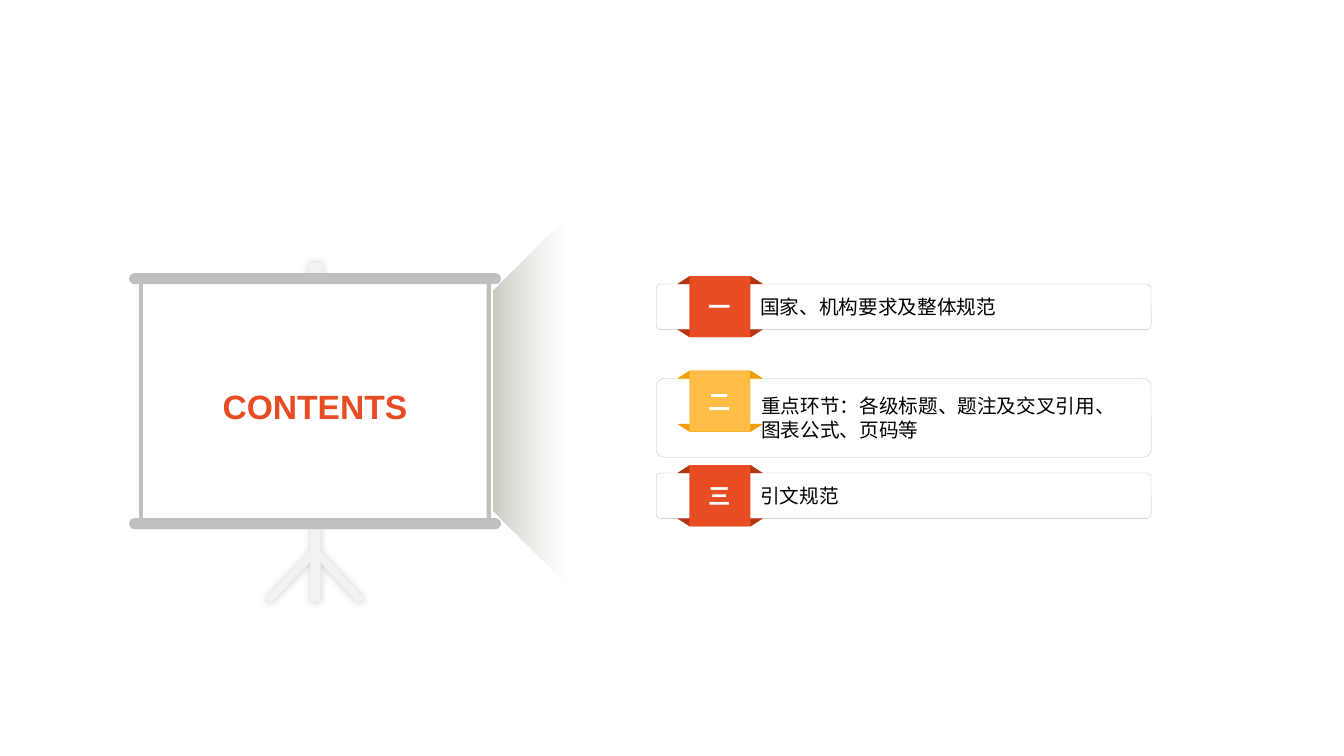
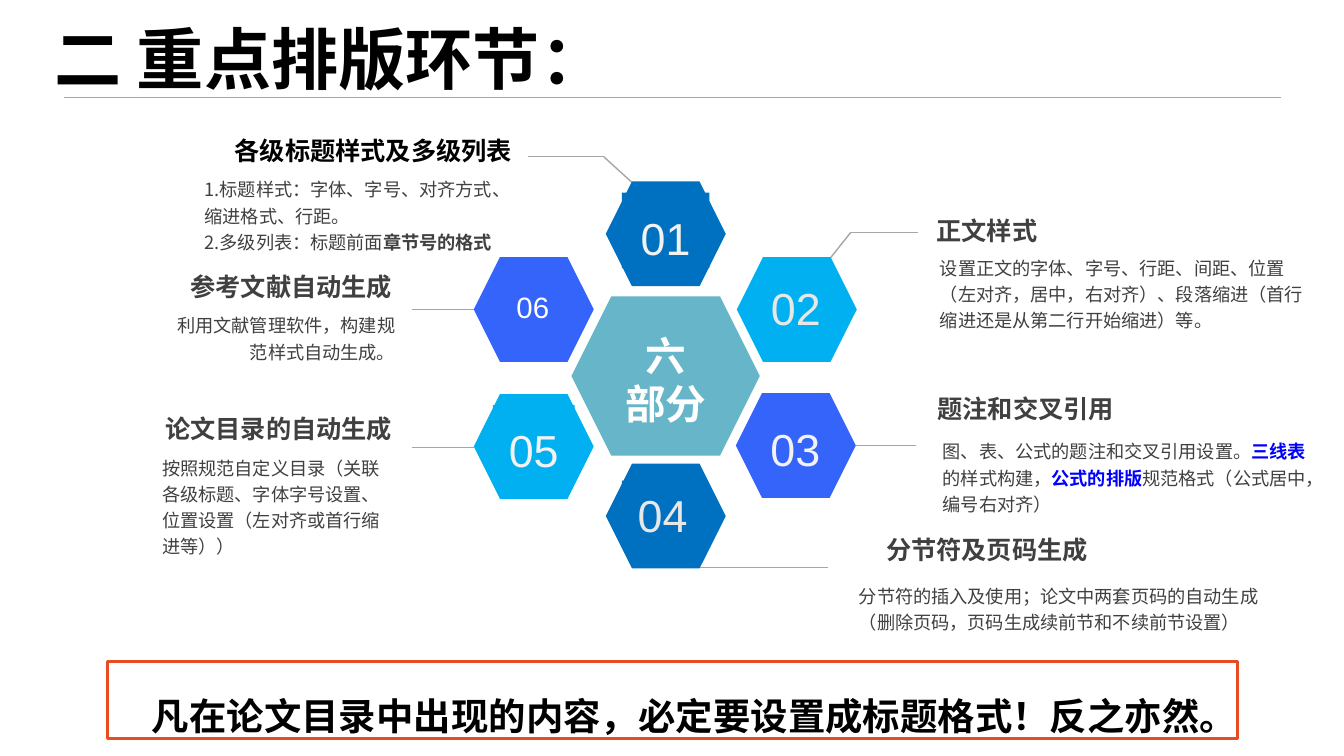
import lxml.etree
import pptx
import pptx.dml.color
import pptx.enum.shapes
import pptx.enum.text
import pptx.oxml.ns
import pptx.util

Pt = pptx.util.Pt
qn = pptx.oxml.ns.qn
rgb = pptx.dml.color.RGBColor.from_string
MSO = pptx.enum.shapes.MSO_SHAPE
ALIGN = pptx.enum.text.PP_ALIGN
ANCHOR = pptx.enum.text.MSO_ANCHOR

LATIN, CJK = "Arial", "Noto Sans CJK SC"
ORANGE, RUST, AMBER, DARK_AMBER = "E84C22", "B53513", "FFBD47", "F49D00"
NAVY, SKY, INDIGO, TEAL = "0070C0", "00B0F0", "3564FB", "66B5C9"
BLACK, WHITE, TEXT, GREY, RULE, LINK = "000000", "FFFFFF", "404040", "BFBFBF", "A6A6A6", "0000FF"


def add(s, kind, box, fill=None, line=None, width=1):
    """Add a preset shape, or a text box when kind is None; box is in points."""
    box = [Pt(v) for v in box]
    if kind is None:
        return s.shapes.add_textbox(*box)
    sp = s.shapes.add_shape(kind, *box)
    sp.shadow.inherit = False
    if fill:
        sp.fill.solid()
        sp.fill.fore_color.rgb = rgb(fill)
    else:
        sp.fill.background()
    if line:
        sp.line.color.rgb = rgb(line)
        sp.line.width = Pt(width)
    else:
        sp.line.fill.background()
    return sp


def write(sp, paragraphs, size, color=BLACK, bold=False, font=CJK, align=ALIGN.LEFT,
          anchor=ANCHOR.TOP, spacing=None, margins=(6.5, 3.6, 6.5, 3.6), wrap=True):
    """Fill a shape; each paragraph is a list of runs: a string or (text, color, bold)."""
    tf = sp.text_frame
    tf.auto_size = pptx.enum.text.MSO_AUTO_SIZE.NONE
    tf.word_wrap = wrap
    tf.vertical_anchor = anchor
    tf.margin_left, tf.margin_top, tf.margin_right, tf.margin_bottom = [Pt(m) for m in margins]
    for i, runs in enumerate(paragraphs):
        p = tf.paragraphs[0] if i == 0 else tf.add_paragraph()
        p.alignment = align
        p.line_spacing = spacing
        for run in runs:
            text, run_color, run_bold = (run, color, bold) if isinstance(run, str) else run
            r = p.add_run()
            r.text = text
            r.font.size = Pt(size)
            r.font.bold = run_bold
            r.font.name = font
            r.font.color.rgb = rgb(run_color)
            lxml.etree.SubElement(r.font._element, qn("a:ea"), typeface=CJK)


prs = pptx.Presentation()
prs.slide_width, prs.slide_height = Pt(960), Pt(540)
title_only = prs.slide_layouts[5]

# Slide 1: contents on a projection screen
s = prs.slides.add_slide(title_only)

beam = add(s, MSO.TRAPEZOID, (247.7, 260.6, 261.4, 51.1))
beam.rotation = 270
beam.adjustments[0] = 1.013
beam.fill.gradient()
beam.fill.gradient_angle = 270
for stop, color, position in zip(beam.fill.gradient_stops, ("CBCBC3", "DFDFDB"), (0, 1)):
    stop.color.rgb = rgb(color)
    stop.position = position
clear = beam._element.spPr.findall(".//" + qn("a:srgbClr"))[-1]
lxml.etree.SubElement(clear, qn("a:alpha"), val="0")

pole_top = [(220.3, 187.9), (230.4, 187.9), (230.4, 201.6), (220.3, 201.6)]
tripod = [(221.8, 357.8), (229, 357.8), (229, 393.8), (260.6, 427.7), (255.6, 430.6),
          (229, 401.8), (229, 429.8), (221.8, 429.8), (221.8, 401), (193.7, 430.6),
          (189.4, 427.7), (221.8, 393.1)]
outlines = [[(Pt(x), Pt(y)) for x, y in outline] for outline in (pole_top, tripod)]
builder = s.shapes.build_freeform(*outlines[0][0], scale=1.0)
builder.add_line_segments(outlines[0][1:], close=True)
builder.move_to(*outlines[1][0])
builder.add_line_segments(outlines[1][1:], close=True)
stand = builder.convert_to_shape()
stand.fill.solid()
stand.fill.fore_color.rgb = rgb("F2F2F2")
stand.line.fill.background()
stand.shadow.inherit = False
shadow = lxml.etree.SubElement(stand._element.spPr.find(qn("a:effectLst")), qn("a:outerShdw"),
                               blurRad=str(Pt(6)), dist="0", dir="13500000", rotWithShape="0")
shade = lxml.etree.SubElement(shadow, qn("a:srgbClr"), val=BLACK)
lxml.etree.SubElement(shade, qn("a:alpha"), val="20000")

add(s, MSO.RECTANGLE, (99.4, 199, 251.2, 175), GREY)
add(s, MSO.RECTANGLE, (102.2, 203, 245.5, 167), WHITE)
for y in (195.1, 370.1):
    rail = add(s, MSO.ROUNDED_RECTANGLE, (92.2, y, 265.7, 7.9), GREY)
    rail.adjustments[0] = 0.5

title = s.shapes.title
title.left, title.top, title.width, title.height = Pt(130.3), Pt(266.5), Pt(189.4), Pt(46.8)
write(title, [["CONTENTS"]], 24, ORANGE, True, LATIN, ALIGN.CENTER, ANCHOR.MIDDLE)
s.shapes._spTree.append(title._element)

chapters = [
    ("一", [["国家、机构要求及整体规范"]], 32.4, ORANGE, RUST),
    ("二", [["重点环节：各级标题、题注及交叉引用、"], ["图表公式、页码等"]], 56.2, AMBER, DARK_AMBER),
    ("三", [["引文规范"]], 32.4, ORANGE, RUST),
]
for i, (number, lines, height, color, fold_color) in enumerate(chapters):
    y = 197.3 + 67.5 * i
    bar = add(s, MSO.ROUNDED_RECTANGLE, (468.7, y + 5.6, 353.5, height), None, GREY, 0.25)
    bar.adjustments[0] = 0.098
    write(bar, lines, 14, font=LATIN, anchor=ANCHOR.MIDDLE, spacing=Pt(17),
          margins=(73.5, 3.6, 7.2, 3.6))
    for fold_y, turn in ((y + 38, 180), (y, 0)):
        fold = add(s, MSO.TRAPEZOID, (483.8, fold_y, 61.2, 5.6), fold_color)
        fold.adjustments[0] = 1.546
        fold.rotation = turn
    badge = add(s, MSO.RECTANGLE, (492.5, y, 43.6, 43.6), color)
    write(badge, [[number]], 16, WHITE, True, LATIN, ALIGN.CENTER, ANCHOR.MIDDLE)

# Slide 2: six parts around a hexagon
s = prs.slides.add_slide(title_only)
title = s.shapes.title
title.left, title.top, title.width, title.height = Pt(29.5), Pt(2.9), Pt(421.2), Pt(67.7)
write(title, [["二 重点排版环节："]], 48, bold=True, spacing=Pt(62),
      margins=(9.4, 5, 9.4, 0), wrap=False)

leader_lines = [
    (45.4, 69.8, 915.1, 69.8),
    (654.5, 318.2, 611.3, 318.2),
    (499.7, 405.4, 591.8, 405.4),
    (338.4, 319.7, 294.5, 319.7),
    (338.4, 221, 294.5, 221),
    (451.4, 130.3, 431.3, 112),
    (431.3, 112, 377.3, 112),
    (592.6, 185, 607.7, 166),
    (607.7, 166, 655.9, 166),
]
for ends in leader_lines:
    line = s.shapes.add_connector(pptx.enum.shapes.MSO_CONNECTOR.STRAIGHT, *[Pt(v) for v in ends])
    line.line.color.rgb = rgb(RULE)
    line.line.width = Pt(1)
    lxml.etree.SubElement(line._element.spPr, qn("a:effectLst"))

# number, hexagon corner, label box, fill, text colour, size, line spacing
parts = [
    ("02", 526.3, 183.6, (539.3, 195.8, 58.3, 46.1), SKY, "E7E7E7", 32, 1.0),
    ("01", 432.7, 129.6, (444.2, 137.5, 62.6, 54), NAVY, "F2F2F2", 32, 1.2),
    ("03", 525.6, 280.8, (535, 288.7, 66.2, 54), INDIGO, "F2F2F2", 32, 1.2),
    ("05", 338.4, 281.5, (352.1, 289.4, 58.3, 54), SKY, "F2F2F2", 32, 1.2),
    ("06", 338.4, 183.6, (351.4, 195.8, 58.3, 46.1), INDIGO, WHITE, 21, 1.0),
    ("04", 432.7, 331.2, (444.2, 343.4, 58.3, 46.1), NAVY, "E7E7E7", 32, 1.0),
]
for number, x, y, label_box, fill, color, size, spacing in parts:
    add(s, MSO.HEXAGON, (x, y, 85.7, 74.9), fill)
    label = add(s, None if number == "03" else MSO.RECTANGLE, label_box, fill)
    write(label, [[number]], size, color, font=LATIN, align=ALIGN.CENTER, spacing=spacing,
          anchor=ANCHOR.MIDDLE if size == 21 else ANCHOR.TOP, margins=(9.4, 5, 9.4, 5))

add(s, MSO.HEXAGON, (408.2, 211.7, 134.6, 113.8), TEAL)
center = add(s, MSO.RECTANGLE, (434.2, 229, 82.8, 77.8), TEAL)
write(center, [["六"], ["部分"]], 29, WHITE, True, align=ALIGN.CENTER, spacing=Pt(34.3),
      margins=(9.4, 7.5, 9.4, 0))

# heading, its box and colour, body paragraphs, their box and alignment
callouts = [
    ("各级标题样式及多级列表", (159.1, 92.2, 213.1, 28.1), BLACK,
     [["1.标题样式：字体、字号、对齐方式、缩进格式、行距。"],
      ["2.多级列表：标题前面", ("章节号的格式", TEXT, True)]],
     (139.7, 121, 234.7, 61.9), ALIGN.LEFT),
    ("参考文献自动生成", (128.2, 189.4, 158.4, 28.1), TEXT,
     [["利用文献管理软件，构建规范样式自动生成。"]],
     (109.4, 218.2, 179.3, 44.6), ALIGN.RIGHT),
    ("论文目录的自动生成", (110.2, 290.9, 176.4, 28.1), TEXT,
     [["按照规范自定义目录（关联各级标题、字体字号设置、位置设置（左对齐或首行缩进等））"]],
     (109.4, 319.7, 179.3, 82.1), ALIGN.LEFT),
    ("正文样式", (661.7, 149, 85.7, 28.1), TEXT,
     [["设置正文的字体、字号、行距、间距、位置（左对齐，居中，右对齐）、"
       "段落缩进（首行缩进还是从第二行开始缩进）等。"]],
     (664.9, 177.1, 275, 61.9), ALIGN.LEFT),
    ("题注和交叉引用", (661.7, 276.5, 140.4, 28.1), TEXT,
     [["图、表、公式的题注和交叉引用设置。", ("三线表", LINK, True), "的样式构建，",
       ("公式的排版", LINK, True), "规范格式（公式居中，编号右对齐）"]],
     (667, 308.2, 285.1, 82.1), ALIGN.LEFT),
    ("分节符及页码生成", (625, 377.3, 158.4, 28.1), TEXT,
     [["分节符的插入及使用；论文中两套页码的自动生成（删除页码，页码生成续前节和不续前节设置）"]],
     (607, 411.1, 320.4, 44.6), ALIGN.LEFT),
]
for heading, heading_box, color, body, body_box, align in callouts:
    write(add(s, None, heading_box), [[heading]], 18, color, True, align=ALIGN.RIGHT,
          spacing=Pt(22.5), wrap=False)
    write(add(s, None, body_box), body, 13, TEXT, align=align, spacing=Pt(18.7))

banner = add(s, MSO.RECTANGLE, (77, 472.3, 807.1, 55.4), WHITE, ORANGE, 2)
write(banner, [["凡在论文目录中出现的内容，必定要设置成标题格式！反之亦然。"]], 26.7, bold=True,
      spacing=Pt(49.5), margins=(31.5, 5, 0, 0), wrap=False)

prs.save("out.pptx")
